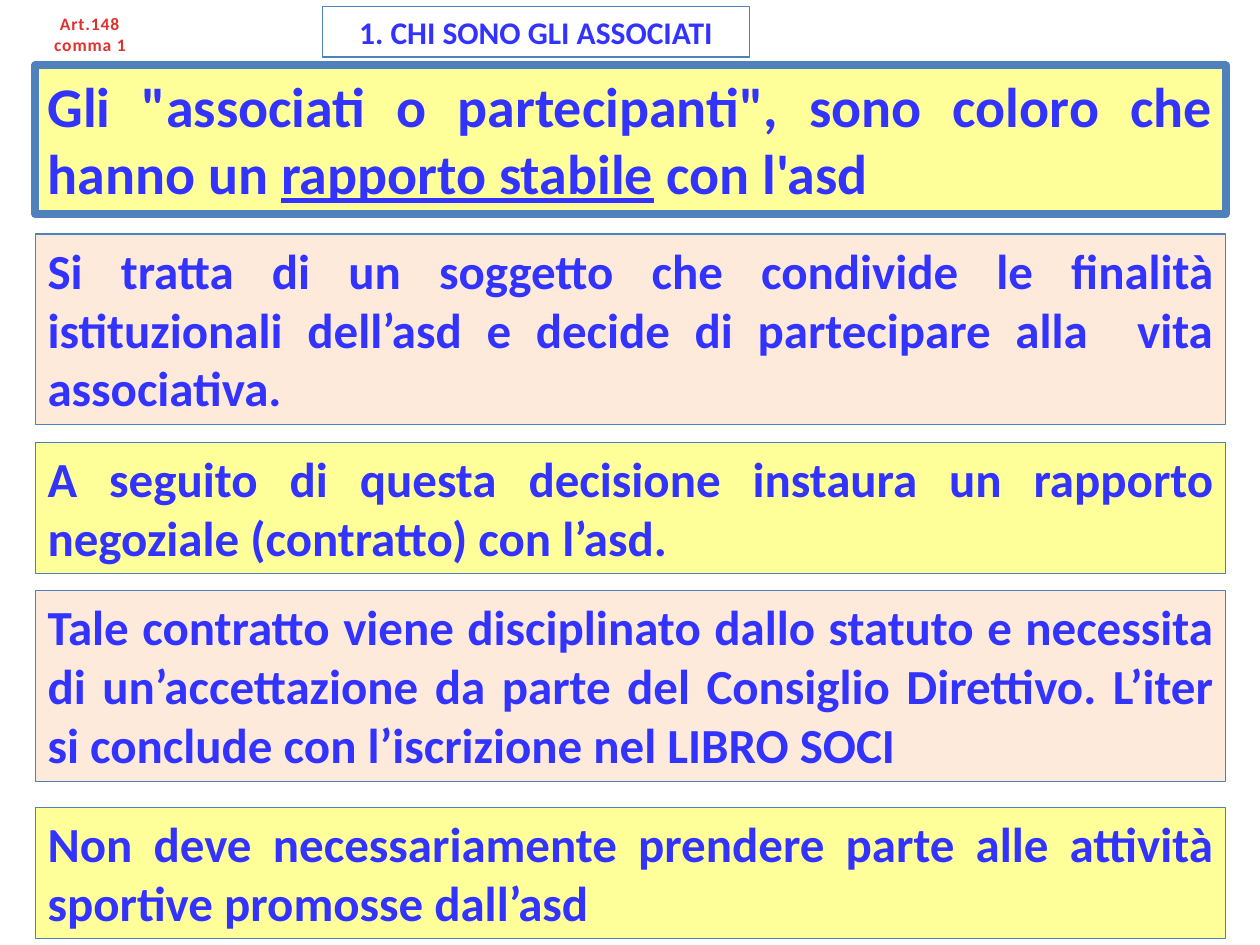
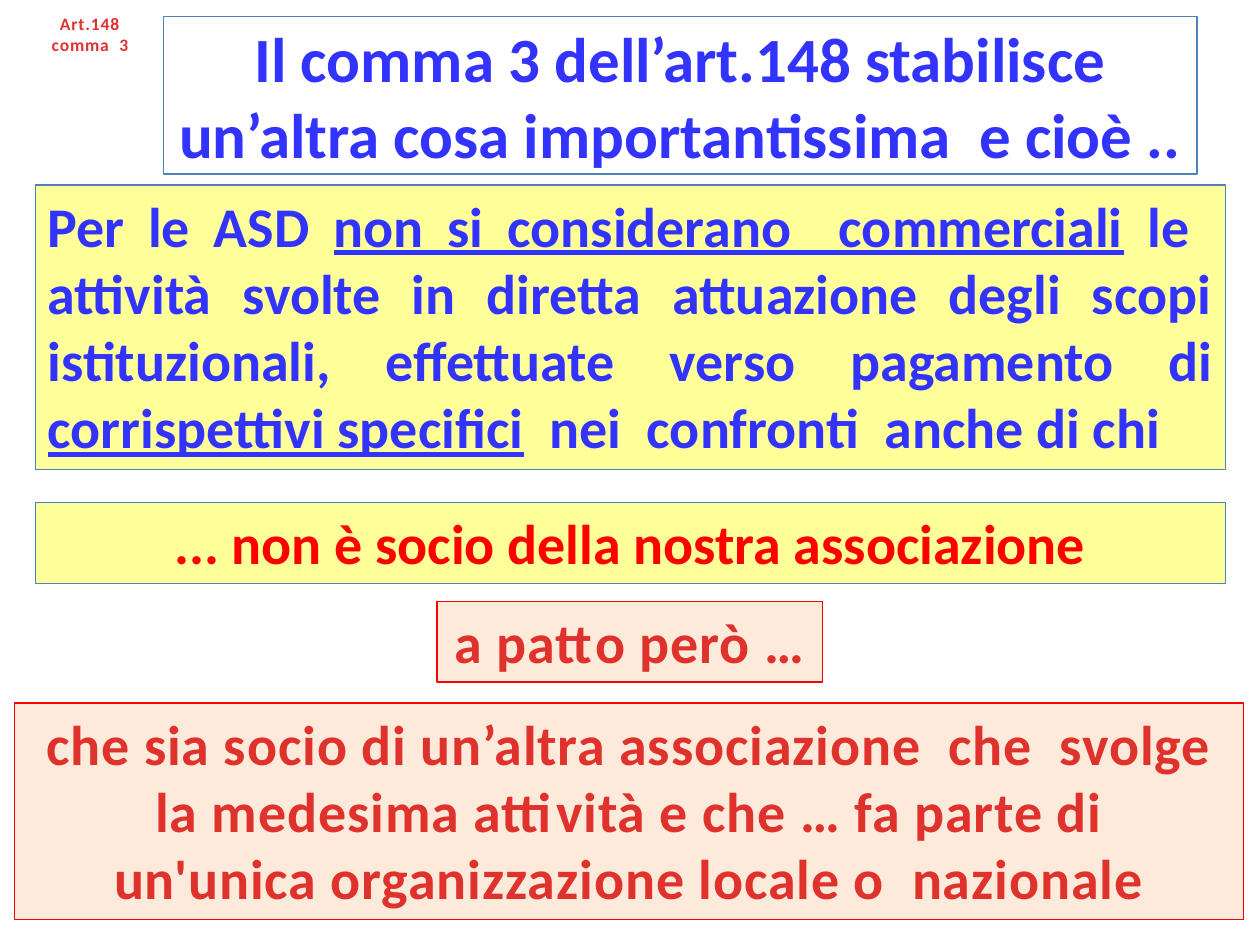
from dataclasses import dataclass
from typing import Optional

from pptx import Presentation
from pptx.dml.color import RGBColor
from pptx.enum import shapes, text
from pptx.util import Cm, Pt

COLORS = {
    "blue": "3333FF",
    "red": "FF0000",
    "brick": "E0322D",
    "dark_brick": "A2201C",
    "border": "4F81BD",
    "yellow": "FFFF99",
    "peach": "FDEADA",
}
FONT = "Calibri"
LEFT, FULL_WIDTH = 0.71, 24.0
CENTER, JUSTIFY = text.PP_ALIGN.CENTER, text.PP_ALIGN.JUSTIFY


@dataclass(frozen=True)
class Run:
    words: str
    underline: bool = False


@dataclass(frozen=True)
class Panel:
    """A block of text; lengths in centimetres, embossed text is a brick gradient."""
    paragraphs: list[list[Run]]
    top: float
    height: float
    left: float = LEFT
    width: float = FULL_WIDTH
    size: int = 28
    color: str = "blue"
    embossed: bool = False
    align: text.PP_ALIGN = JUSTIFY
    fill: Optional[str] = None
    border: Optional[str] = "border"
    border_pt: float = 0.75
    wrap: bool = True
    grow: bool = True


def rgb(name: str) -> RGBColor:
    return RGBColor.from_string(COLORS[name])


def plain(*lines: str) -> list[list[Run]]:
    return [[Run(line)] for line in lines]


def emboss(run) -> None:
    fill = run.font.fill
    fill.gradient()
    fill.gradient_angle = 270
    for stop, position, color in zip(fill.gradient_stops, (0.25, 1), ("brick", "dark_brick")):
        stop.position = position
        stop.color.rgb = rgb(color)
    run._r.get_or_add_rPr().set("spc", "50")


def write(frame, panel: Panel) -> None:
    frame.word_wrap = panel.wrap
    frame.vertical_anchor = text.MSO_ANCHOR.TOP if panel.grow else text.MSO_ANCHOR.MIDDLE
    frame.auto_size = (text.MSO_AUTO_SIZE.SHAPE_TO_FIT_TEXT if panel.grow
                       else text.MSO_AUTO_SIZE.NONE)
    for index, runs in enumerate(panel.paragraphs):
        paragraph = frame.add_paragraph() if index else frame.paragraphs[0]
        paragraph.alignment = panel.align
        for part in runs:
            run = paragraph.add_run()
            run.text = part.words
            run.font.name = FONT
            run.font.size = Pt(panel.size)
            run.font.bold = True
            if part.underline:
                run.font.underline = True
            if panel.embossed:
                emboss(run)
            else:
                run.font.color.rgb = rgb(panel.color)


def draw(slide, panel: Panel) -> None:
    area = [Cm(n) for n in (panel.left, panel.top, panel.width, panel.height)]
    if panel.border:
        block = slide.shapes.add_shape(shapes.MSO_SHAPE.RECTANGLE, *area)
        block.shadow.inherit = False
        block.line.color.rgb = rgb(panel.border)
        block.line.width = Pt(panel.border_pt)
        if panel.fill:
            block.fill.solid()
            block.fill.fore_color.rgb = rgb(panel.fill)
        else:
            block.fill.background()
    else:
        block = slide.shapes.add_textbox(*area)
    write(block.text_frame, panel)


def article_tag(label: str) -> Panel:
    return Panel(plain(label), 0.13, 1.12, width=2.21, size=10, embossed=True,
                 align=CENTER, border=None)


def condition(top: float, height: float, left: float, width: float, *lines: str) -> Panel:
    return Panel(plain(*lines), top, height, left, width, size=32, embossed=True,
                 align=CENTER, fill="peach", border="red", wrap=False)


MEMBERS = [
    article_tag("Art.148 comma 1"),
    Panel([[Run('Gli "associati o partecipanti", sono coloro che hanno un '),
            Run("rapporto stabile", underline=True),
            Run(" con l'asd")]],
          1.32, 3.0, size=32, fill="yellow", border_pt=4.5),
    Panel(plain("1. CHI SONO GLI ASSOCIATI"), 0.13, 1.02, 6.5, 8.61, size=18, align=CENTER),
    Panel(plain("Si tratta di un soggetto che condivide le finalità istituzionali "
                "dell’asd e decide di partecipare alla  vita associativa."),
          4.72, 3.84, fill="peach"),
    Panel(plain("A seguito di questa decisione instaura un rapporto negoziale "
                "(contratto) con l’asd."),
          8.92, 2.64, fill="yellow"),
    Panel(plain("Tale contratto viene disciplinato dallo statuto e necessita di "
                "un’accettazione da parte del Consiglio Direttivo. L’iter si conclude "
                "con l’iscrizione nel LIBRO SOCI"),
          11.91, 3.84, fill="peach"),
    Panel(plain("Non deve necessariamente prendere parte alle attività sportive "
                "promosse dall’asd"),
          16.28, 2.64, fill="yellow"),
]

NON_MEMBERS = [
    article_tag("Art.148 comma  3"),
    Panel([[Run("Per le ASD "),
            Run("non si considerano  commerciali", underline=True),
            Run(" le  attività  svolte  in  diretta  attuazione  degli  scopi "
                "istituzionali, effettuate verso pagamento di "),
            Run("corrispettivi specifici", underline=True),
            Run("  nei  confronti  anche di chi")]],
          3.73, 5.74, size=32, fill="yellow"),
    Panel(plain("Il comma 3 dell’art.148 stabilisce un’altra cosa importantissima  e cioè .."),
          0.33, 3.18, 3.3, 20.83, size=36, align=CENTER, grow=False),
    Panel(plain("... non è socio della nostra associazione"),
          10.13, 1.63, size=32, color="red", align=CENTER, fill="yellow"),
    condition(12.12, 1.63, 8.81, 7.77, "a patto però …"),
    condition(14.17, 4.37, 0.3, 24.77,
              "che sia socio di un’altra associazione  che  svolge",
              "la medesima attività e che … fa parte di",
              "un'unica organizzazione locale o  nazionale"),
]


def main() -> None:
    deck = Presentation()
    deck.slide_width, deck.slide_height = Cm(25.4), Cm(19.05)
    for panels in (MEMBERS, NON_MEMBERS):
        slide = deck.slides.add_slide(deck.slide_layouts[6])
        for panel in panels:
            draw(slide, panel)
    deck.save("out.pptx")


if __name__ == "__main__":
    main()
